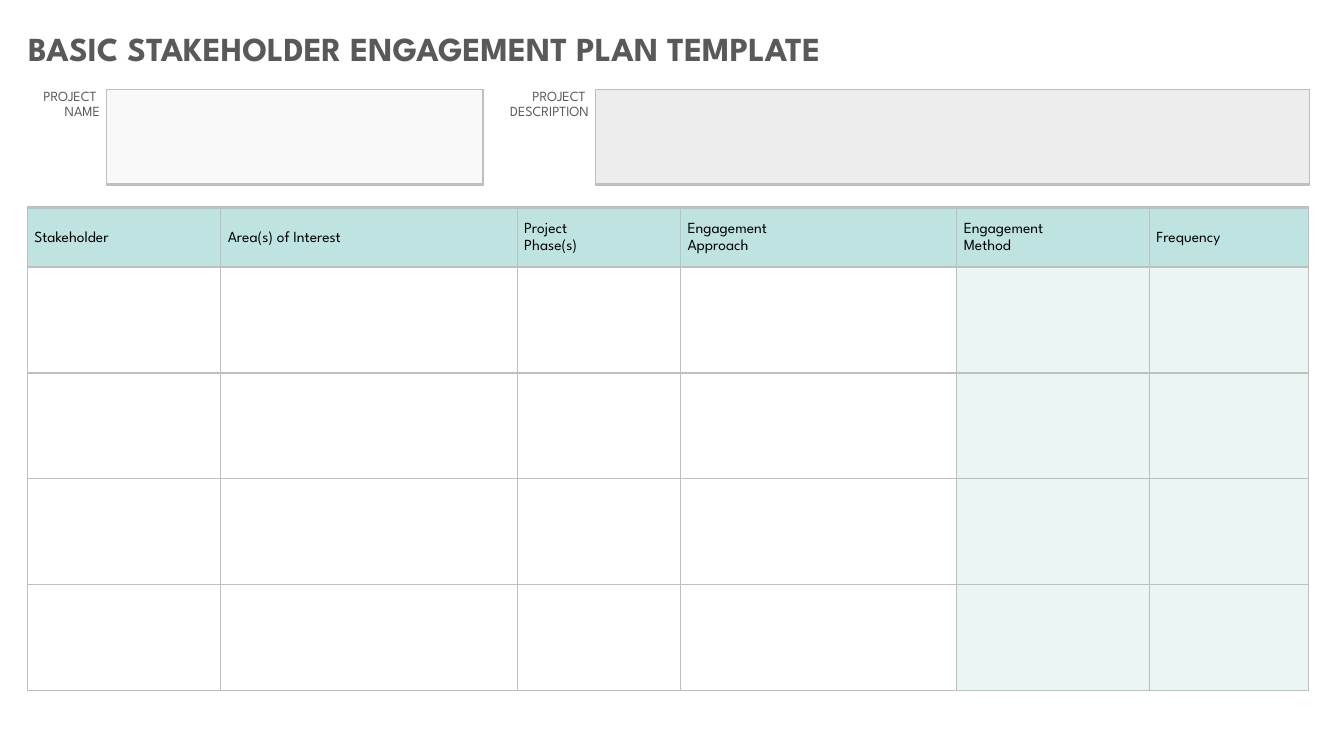
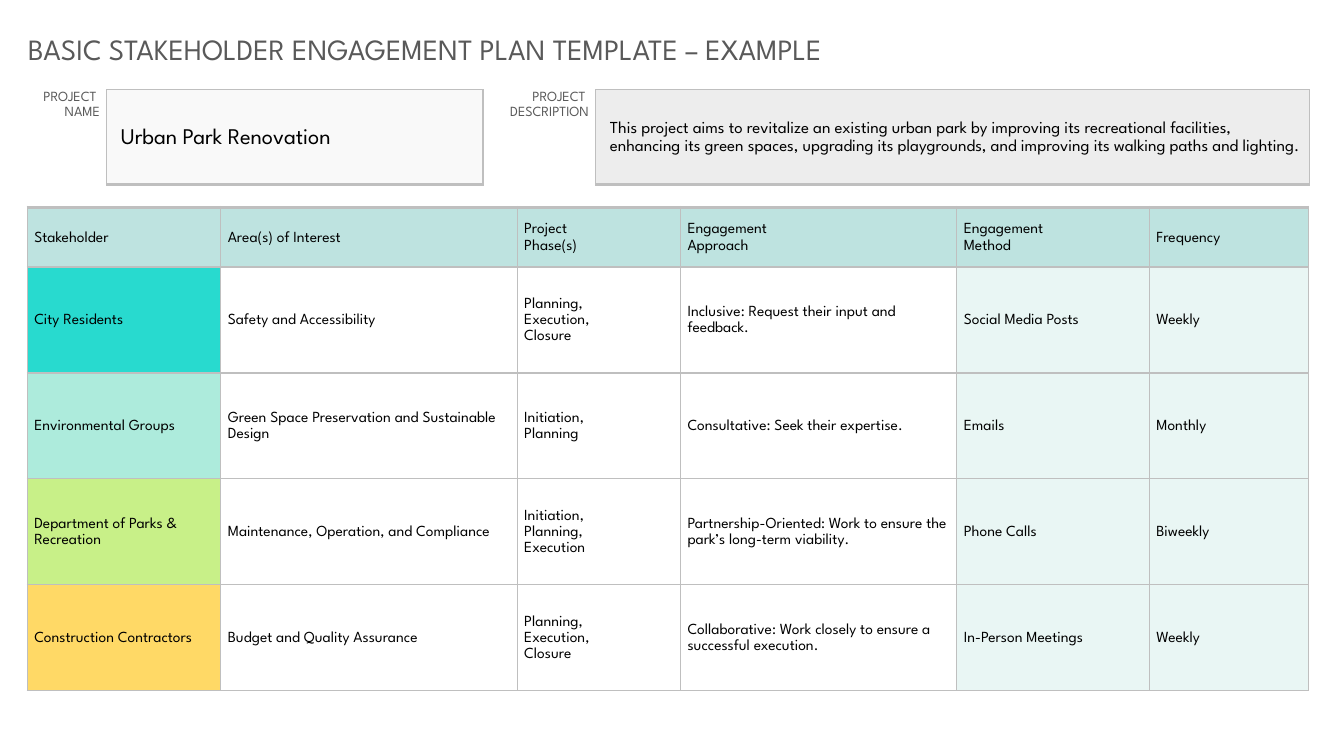
from dataclasses import dataclass

from lxml import etree
from pptx import Presentation
from pptx.dml.color import RGBColor
from pptx.enum.text import MSO_ANCHOR, MSO_AUTO_SIZE, PP_ALIGN
from pptx.oxml.ns import qn
from pptx.util import Pt

PX = 9144
TOP, MIDDLE = MSO_ANCHOR.TOP, MSO_ANCHOR.MIDDLE
LEFT, RIGHT = PP_ALIGN.LEFT, PP_ALIGN.RIGHT
FIT_SHAPE = MSO_AUTO_SIZE.SHAPE_TO_FIT_TEXT
PLAIN_TABLE = "{2D5ABB26-0587-4C30-8999-92F81FD0307C}"


@dataclass(frozen=True)
class Theme:
    font: str = "League Spartan"
    ink: str = "000000"
    muted: str = "595959"
    rule: str = "BFBFBF"
    white: str = "FFFFFF"
    name_fill: str = "F9F9F9"
    description_fill: str = "EDEDED"
    header_fill: str = "BEE3E0"
    tint: str = "E9F6F4"
    label_size: int = 10
    body_size: int = 11
    description_size: int = 12
    name_size: int = 16
    spacing: float = 1.15
    thin: float = 1
    medium: float = 2.25
    thick: float = 3


HEADERS = ["Stakeholder", "Area(s) of Interest", "Project \nPhase(s)",
           "Engagement \nApproach", "Engagement \nMethod", "Frequency"]
COLUMNS = [192, 294, 162, 274, 191, 158]
HEADER_HEIGHT, ROW_HEIGHT, ROW_COUNT = 59, 105, 4
FIRST_TINTED = 4

EXAMPLE_ROWS = [
    ["City Residents", "Safety and Accessibility",
     "Planning, \nExecution, \nClosure",
     "Inclusive: Request their input and feedback.",
     "Social Media Posts", "Weekly"],
    ["Environmental Groups",
     "Green Space Preservation and Sustainable Design",
     "Initiation, \nPlanning", "Consultative: Seek their expertise.",
     "Emails", "Monthly"],
    ["Department of Parks & Recreation",
     "Maintenance, Operation, and Compliance",
     "Initiation, \nPlanning, \nExecution",
     "Partnership-Oriented: Work to ensure the park’s long-term viability.",
     "Phone Calls", "Biweekly"],
    ["Construction Contractors", "Budget and Quality Assurance",
     "Planning, \nExecution, \nClosure",
     "Collaborative: Work closely to ensure a successful execution.",
     "In-Person Meetings", "Weekly"],
]
STAKEHOLDER_FILLS = ["28DACF", "ADEBDC", "C8F088", "FFD966"]
EXAMPLE_DESCRIPTION = (
    "This project aims to revitalize an existing urban park by improving its "
    "recreational facilities, enhancing its green spaces, upgrading its "
    "playgrounds, and improving its walking paths and lighting.")


class Deck:
    def __init__(self, theme):
        self.theme = theme
        self.prs = Presentation()
        self.prs.slide_width = 1333 * PX
        self.prs.slide_height = 750 * PX
        self.s = None

    def new_slide(self):
        self.s = self.prs.slides.add_slide(self.prs.slide_layouts[6])

    def style(self, p, size, color, bold=False):
        p.font.name = self.theme.font
        p.font.size = Pt(size)
        p.font.bold = bold
        p.font.color.rgb = RGBColor.from_string(color)

    def title(self, text, top, height, size, bold):
        sp = self.s.shapes.add_textbox(18 * PX, top * PX, 913 * PX, height * PX)
        tf = sp.text_frame
        tf.word_wrap = True
        tf.auto_size = FIT_SHAPE
        p = tf.paragraphs[0]
        p.text = text
        self.style(p, size, self.theme.muted, bold)

    def table(self, left, top, columns, rows):
        frame = self.s.shapes.add_table(
            len(rows), len(columns), left * PX, top * PX,
            sum(columns) * PX, sum(rows) * PX)
        table = frame.table
        table.first_row = table.horz_banding = False
        table._tbl.tblPr.find(qn("a:tableStyleId")).text = PLAIN_TABLE
        for column, width in zip(table.columns, columns):
            column.width = width * PX
        for row, height in zip(table.rows, rows):
            row.height = height * PX
        return table

    def borders(self, cell, **widths):
        tc_pr = cell._tc.get_or_add_tcPr()
        for side in "LRTB":
            width = widths.get(side, self.theme.thin)
            ln = etree.SubElement(tc_pr, qn(f"a:ln{side}"), w=str(Pt(width)))
            fill = etree.SubElement(ln, qn("a:solidFill"))
            etree.SubElement(fill, qn("a:srgbClr"), val=self.theme.rule)

    def fill(self, cell, color):
        cell.fill.solid()
        cell.fill.fore_color.rgb = RGBColor.from_string(color)

    def cell_text(self, cell, text, size, color, align=LEFT, anchor=MIDDLE,
                  inset=7):
        cell.margin_left, cell.margin_right = inset * PX, 7 * PX
        cell.margin_top = cell.margin_bottom = 0
        cell.vertical_anchor = anchor
        p = cell.text_frame.paragraphs[0]
        p.text = text
        p.alignment = align
        p.line_spacing = self.theme.spacing
        self.style(p, size, color)

    def field(self, left, columns, label, value, size, fill):
        t = self.theme
        label_cell, value_cell = self.table(left, 89, columns, [94]).rows[0].cells
        self.cell_text(label_cell, label, t.label_size, t.muted, RIGHT, TOP)
        self.borders(value_cell, B=t.medium)
        self.fill(value_cell, fill)
        self.cell_text(value_cell, value, size, t.ink, inset=14)

    def plan(self, rows, stakeholder_fills):
        t = self.theme
        heights = [HEADER_HEIGHT] + [ROW_HEIGHT] * ROW_COUNT
        table = self.table(27, 206, COLUMNS, heights)
        for r, texts in enumerate([HEADERS] + rows):
            for c, text in enumerate(texts):
                cell = table.cell(r, c)
                if r == 0:
                    color = t.header_fill
                elif c == 0:
                    color = stakeholder_fills[r - 1]
                else:
                    color = t.tint if c >= FIRST_TINTED else t.white
                self.borders(cell, T=t.thin if r else t.thick)
                self.fill(cell, color)
                self.cell_text(cell, text, t.body_size, t.ink)

    def plan_slide(self, title, name, description, rows, stakeholder_fills):
        t = self.theme
        self.new_slide()
        self.title(*title)
        self.field(18, [88, 373], "PROJECT \nNAME", name,
                   t.name_size, t.name_fill)
        self.field(479, [112, 708], "PROJECT \nDESCRIPTION", description,
                   t.description_size, t.description_fill)
        self.plan(rows, stakeholder_fills)


def main():
    theme = Theme()
    deck = Deck(theme)
    blank_rows = [[""] * len(COLUMNS)] * ROW_COUNT
    deck.plan_slide(
        ("BASIC STAKEHOLDER ENGAGEMENT PLAN TEMPLATE", 23, 50, 24, True),
        "", "", blank_rows, [theme.white] * ROW_COUNT)
    deck.plan_slide(
        ("BASIC STAKEHOLDER ENGAGEMENT PLAN TEMPLATE – EXAMPLE",
         26, 45, 21, False),
        "Urban Park Renovation", EXAMPLE_DESCRIPTION,
        EXAMPLE_ROWS, STAKEHOLDER_FILLS)
    deck.prs.save("out.pptx")


if __name__ == "__main__":
    main()
